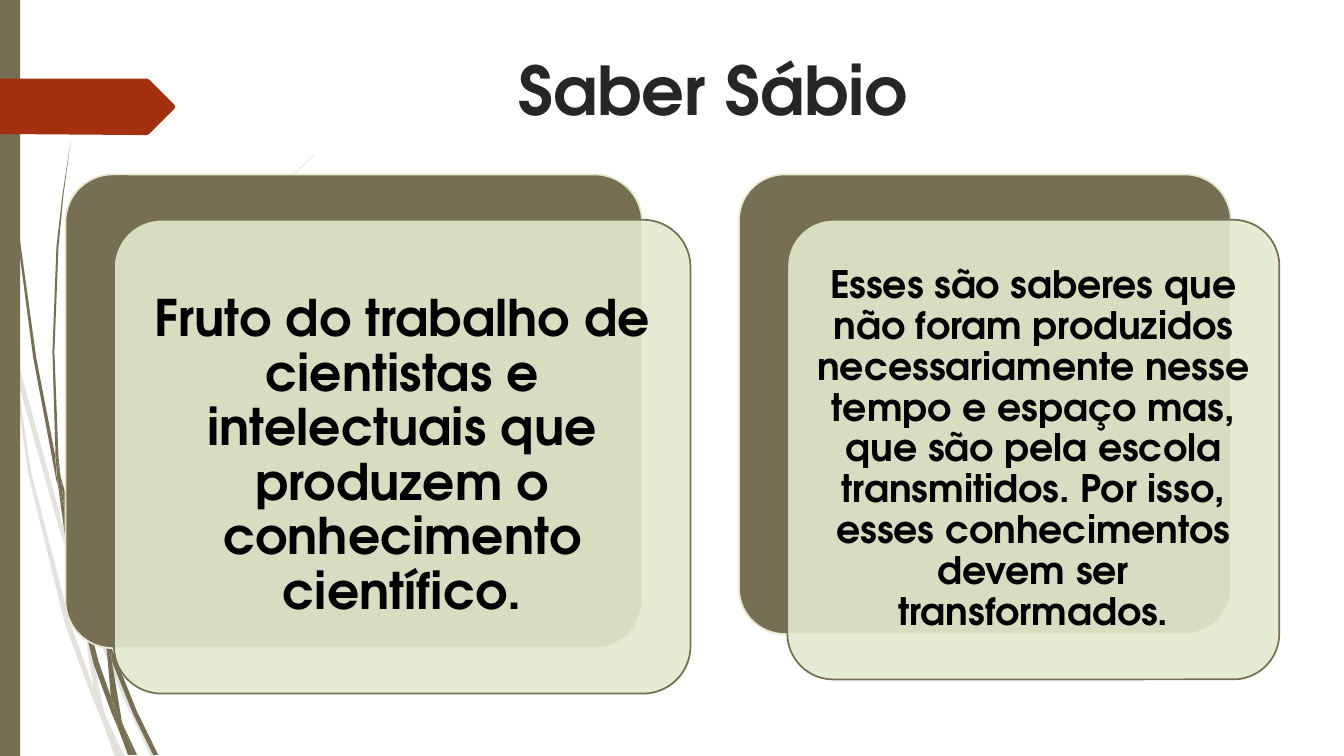
from dataclasses import dataclass

from lxml.etree import SubElement
from pptx import Presentation
from pptx.dml.color import RGBColor
from pptx.enum.shapes import MSO_SHAPE
from pptx.enum.text import MSO_ANCHOR, PP_ALIGN
from pptx.oxml.ns import qn
from pptx.shapes.base import BaseShape
from pptx.slide import Slide
from pptx.util import Pt

FONT = "TeX Gyre Adventor"
OLIVE, CREAM, RUST, CHARCOAL, BLACK = "766F54", "E3EACF", "A53010", "262626", "000000"
OUTLINE_UNIT = Pt(0.72)  # outline points are in hundredths of an inch

Outline = list[tuple[int, int]]


@dataclass
class Box:
    left: float
    top: float
    width: float
    height: float

    def lengths(self) -> tuple[Pt, Pt, Pt, Pt]:
        return Pt(self.left), Pt(self.top), Pt(self.width), Pt(self.height)

    def shifted(self, across: float, down: float) -> "Box":
        return Box(self.left + across, self.top + down, self.width, self.height)

    def shrunk(self, margin: float) -> "Box":
        return Box(self.left + margin, self.top + margin,
                   self.width - 2 * margin, self.height - 2 * margin)


@dataclass
class Card:
    box: Box
    text: str
    size: float


PALE_GRASS: list[Outline] = [
    [(11, 350), (9, 322), (0, 282), (0, 299), (10, 344)],
    [(58, 522), (84, 599), (85, 586), (62, 520), (14, 345), (17, 376)],
    [(92, 607), (88, 596), (88, 610), (123, 694), (150, 751), (155, 751), (127, 692)],
    [(119, 751), (124, 751), (105, 711)],
    [(93, 683), (70, 619), (31, 469), (17, 376), (11, 350), (28, 470), (65, 621),
     (92, 693), (101, 714), (99, 707)],
    [(84, 599), (87, 646), (93, 683), (96, 692), (105, 711), (103, 706), (91, 646),
     (88, 610), (88, 608)],
    [(88, 584), (110, 462), (160, 349), (229, 245), (268, 198), (290, 175), (312, 154),
     (312, 153), (289, 175), (268, 197), (228, 244), (158, 348), (107, 461), (85, 584),
     (85, 586), (88, 596)],
    [(101, 714), (114, 751), (119, 751)],
    [(96, 692), (93, 683), (99, 707), (101, 714), (119, 751), (105, 711)],
]
DARK_GRASS: list[Outline] = [
    [(7, 110), (17, 233), (33, 355), (56, 477), (57, 481), (55, 457), (55, 453),
     (36, 355), (19, 232), (8, 109), (5, 48), (4, 0), (3, 0), (4, 48)],
    [(88, 592), (106, 645), (106, 633), (106, 631), (93, 590), (60, 472), (64, 505)],
    [(113, 649), (110, 641), (111, 656), (132, 708), (152, 749), (157, 749), (136, 706)],
    [(110, 691), (98, 657), (72, 556), (64, 505), (57, 477), (68, 557), (93, 659),
     (111, 708), (117, 722), (116, 717)],
    [(60, 472), (58, 453), (54, 349), (58, 245), (63, 193), (70, 141), (62, 193),
     (56, 245), (52, 349), (55, 449)],
    [(133, 749), (136, 749), (122, 719)],
    [(57, 477), (64, 505), (60, 472), (55, 449), (55, 453)],
    [(117, 722), (127, 749), (131, 749)],
    [(106, 645), (110, 691), (116, 706), (122, 719), (121, 716), (111, 656), (109, 651)],
    [(106, 645), (109, 651), (111, 656), (110, 641), (106, 631), (106, 633)],
    [(116, 706), (110, 691), (116, 717), (117, 722), (130, 749), (133, 749), (122, 719)],
]
ARROW: Outline = [(173, 108), (148, 133), (146, 134), (136, 134), (0, 133), (0, 78),
                  (146, 78), (148, 79), (173, 104), (174, 106)]
CARDS = [
    Card(Box(46.8, 124.6, 411.8, 338.4),
         "Fruto do trabalho de cientistas e intelectuais que produzem o conhecimento "
         "científico.", 36),
    Card(Box(527.8, 124.6, 351.4, 328.3),
         "Esses são saberes que não foram produzidos necessariamente nesse tempo e espaço "
         "mas, que são pela escola transmitidos. Por isso, esses conhecimentos devem ser "
         "transformados.", 27),
]


def color(code: str) -> RGBColor:
    return RGBColor.from_string(code)


def paint(shape: BaseShape, fill: str, line: str | None = None, opacity: int = 100) -> None:
    shape.shadow.inherit = False
    shape.fill.solid()
    shape.fill.fore_color.rgb = color(fill)
    if opacity < 100:
        fill_color = shape.fill._xPr.find(qn("a:solidFill"))[0]
        SubElement(fill_color, qn("a:alpha"), val=str(opacity * 1000))
    if line:
        shape.line.color.rgb = color(line)
        shape.line.width = Pt(1.25)
    else:
        shape.line.fill.background()


def add_outline(page: Slide, points: Outline, fill: str, opacity: int = 100) -> None:
    builder = page.shapes.build_freeform(*points[0], scale=OUTLINE_UNIT)
    builder.add_line_segments(points[1:], close=True)
    paint(builder.convert_to_shape(), fill, opacity=opacity)


def add_panel(page: Slide, box: Box, fill: str, line: str, opacity: int = 100) -> None:
    panel = page.shapes.add_shape(MSO_SHAPE.ROUNDED_RECTANGLE, *box.lengths())
    panel.adjustments[0] = 0.1
    paint(panel, fill, line, opacity)


def add_text(page: Slide, box: Box, text: str, size: float, ink: str,
             inset: tuple[float, float], spacing: float = 1.0) -> None:
    """Add bold centred text; inset holds the side and the top/bottom margins."""
    frame = page.shapes.add_textbox(*box.lengths()).text_frame
    frame.word_wrap = True
    frame.vertical_anchor = MSO_ANCHOR.MIDDLE
    frame.margin_left = frame.margin_right = Pt(inset[0])
    frame.margin_top = frame.margin_bottom = Pt(inset[1])
    para = frame.paragraphs[0]
    para.alignment = PP_ALIGN.CENTER
    para.line_spacing = spacing
    span = para.add_run()
    span.text = text
    span.font.name = FONT
    span.font.size = Pt(size)
    span.font.bold = True
    span.font.color.rgb = color(ink)


def add_card(page: Slide, card: Card) -> None:
    front = card.box.shifted(34.6, 32.4)
    add_panel(page, card.box, OLIVE, CREAM)
    add_panel(page, front, CREAM, OLIVE, opacity=90)
    inset = 0.3 * card.size
    add_text(page, front.shrunk(0.03 * front.height), card.text, card.size, BLACK,
             (inset, inset), spacing=0.9)


def main() -> None:
    deck = Presentation()
    deck.slide_width, deck.slide_height = Pt(960), Pt(540)
    page = deck.slides.add_slide(deck.slide_layouts[6])

    for blade in PALE_GRASS:
        add_outline(page, blade, OLIVE, opacity=20)
    for blade in DARK_GRASS:
        add_outline(page, blade, OLIVE)
    side_bar = page.shapes.add_shape(MSO_SHAPE.RECTANGLE, *Box(0, 0, 14.4, 540).lengths())
    paint(side_bar, OLIVE)
    add_outline(page, ARROW, RUST)

    add_text(page, Box(135.4, 26.6, 748, 74.2), "Saber Sábio", 48, CHARCOAL, (7.2, 3.6))
    for card in CARDS:
        add_card(page, card)
    deck.save("out.pptx")


if __name__ == "__main__":
    main()
